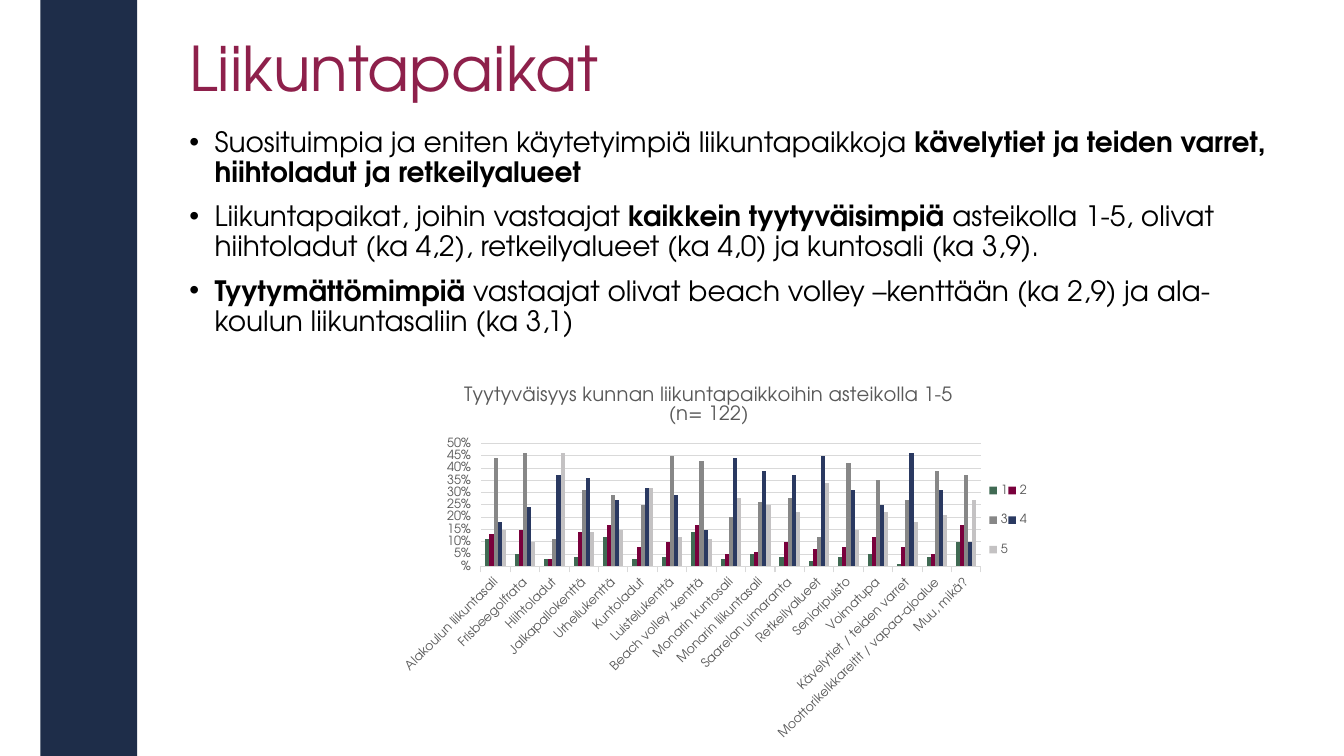
from lxml import etree
from pptx import Presentation
from pptx.chart.data import CategoryChartData
from pptx.dml.color import RGBColor
from pptx.enum.chart import XL_CHART_TYPE as ChartType, XL_LEGEND_POSITION as LegendPosition, XL_TICK_MARK as TickMark
from pptx.enum.shapes import MSO_SHAPE as Shape
from pptx.oxml.ns import qn
from pptx.util import Inches, Pt

FONT = "TeX Gyre Adventor"
GREY, GRID = "595959", "D9D9D9"
CHART_WIDTH, CHART_HEIGHT = 6.34, 3.77


def color(value):
    return RGBColor.from_string(value)


def format_font(font, size, value, bold=False):
    font.name, font.size, font.bold = FONT, Pt(size), bold
    font.color.rgb = color(value)


presentation = Presentation()
presentation.slide_width, presentation.slide_height = Inches(13.33), Inches(7.5)
slide = presentation.slides.add_slide(presentation.slide_layouts[6])

band = slide.shapes.add_shape(Shape.RECTANGLE, Inches(0.4), 0, Inches(0.96), Inches(7.5))
band.shadow.inherit = False
band.fill.solid()
band.fill.fore_color.rgb = color("1E2D49")
band.line.fill.background()

title_frame = slide.shapes.add_textbox(Inches(1.78), Inches(0.33), Inches(10.89), Inches(1.45)).text_frame
title_frame.word_wrap = True
paragraph = title_frame.paragraphs[0]
paragraph.line_spacing = 0.9
run = paragraph.add_run()
run.text = "Liikuntapaikat"
format_font(run.font, 44, "8E204B")

bullets = [
    [("Suosituimpia ja eniten käytetyimpiä liikuntapaikkoja ", False),
     ("kävelytiet ja teiden varret, hiihtoladut ja retkeilyalueet", True)],
    [("Liikuntapaikat, joihin vastaajat ", False),
     ("kaikkein tyytyväisimpiä ", True),
     ("asteikolla 1-5, olivat hiihtoladut (ka 4,2), retkeilyalueet (ka 4,0) ja kuntosali (ka 3,9).", False)],
    [("Tyytymättömimpiä", True),
     (" vastaajat olivat beach volley –kenttään (ka 2,9) ja ala-koulun liikuntasaliin (ka 3,1)", False)],
]
body_frame = slide.shapes.add_textbox(Inches(1.78), Inches(1.22), Inches(10.89), Inches(2.22)).text_frame
body_frame.word_wrap = True
for index, parts in enumerate(bullets):
    paragraph = body_frame.add_paragraph() if index else body_frame.paragraphs[0]
    paragraph.line_spacing = 0.9
    paragraph.space_before = Pt(10)
    for text, bold in parts:
        run = paragraph.add_run()
        run.text = text
        format_font(run.font, 20, "000000", bold)
    properties = paragraph._p.get_or_add_pPr()
    properties.set("marL", str(Inches(0.25)))
    properties.set("indent", str(-Inches(0.25)))
    etree.SubElement(properties, qn("a:buFont"), typeface="Arial")
    etree.SubElement(properties, qn("a:buChar"), char="•")

places = [
    "Alakoulun liikuntasali", "Frisbeegolfrata", "Hiihtoladut", "Jalkapallokenttä", "Urheilukenttä",
    "Kuntoladut", "Luistelukenttä", "Beach volley -kenttä", "Monarin kuntosali", "Monarin liikuntasali",
    "Saarelan uimaranta", "Retkeilyalueet", "Senioripuisto", "Voimatupa", "Kävelytiet / teiden varret",
    "Moottorikelkkareitit / vapaa-ajoalue", "Muu, mikä?",
]
ratings = [
    ("1", "406A53", [11, 5, 3, 4, 12, 3, 4, 14, 3, 5, 4, 2, 4, 5, 1, 4, 10]),
    ("2", "79003C", [13, 15, 3, 14, 17, 8, 10, 17, 5, 6, 10, 7, 8, 12, 8, 5, 17]),
    ("3", "878787", [44, 46, 11, 31, 29, 25, 45, 43, 20, 26, 28, 12, 42, 35, 27, 39, 37]),
    ("4", "2A3961", [18, 24, 37, 36, 27, 32, 29, 15, 44, 39, 37, 45, 31, 25, 46, 31, 10]),
    ("5", "C4C2C3", [15, 10, 46, 14, 15, 32, 12, 11, 28, 25, 22, 34, 15, 22, 18, 21, 27]),
]
chart_data = CategoryChartData(number_format="0%")
chart_data.categories = places
for name, fill, percents in ratings:
    chart_data.add_series(name, [percent / 100 for percent in percents])
chart = slide.shapes.add_chart(ChartType.COLUMN_CLUSTERED, Inches(3.86), Inches(3.65),
                               Inches(CHART_WIDTH), Inches(CHART_HEIGHT), chart_data).chart
format_font(chart.font, 10, "000000")

chart.has_title = True
paragraph = chart.chart_title.text_frame.paragraphs[0]
run = paragraph.add_run()
run.text = "Tyytyväisyys kunnan liikuntapaikkoihin asteikolla 1-5 (n= 122)"
format_font(run.font, 14, GREY)
chart.chart_title.include_in_layout = False

chart.has_legend = True
chart.legend.position = LegendPosition.RIGHT
chart.legend.include_in_layout = False
format_font(chart.legend.font, 9, GREY)

plot = chart.plots[0]
plot.gap_width, plot.overlap = 219, 0
plot.vary_by_categories = False
for series, (name, fill, percents) in zip(plot.series, ratings):
    series.format.fill.solid()
    series.format.fill.fore_color.rgb = color(fill)
    series.invert_if_negative = False

category_axis, value_axis = chart.category_axis, chart.value_axis
for axis in (category_axis, value_axis):
    axis.major_tick_mark = TickMark.OUTSIDE
    format_font(axis.tick_labels.font, 9, GREY)
category_axis._element.find(qn("c:txPr")).find(qn("a:bodyPr")).set("rot", str(-45 * 60000))
value_axis.minimum_scale, value_axis.maximum_scale, value_axis.major_unit = 0, 0.5, 0.05
value_axis.tick_labels.number_format = "#.#%"
value_axis.tick_labels.number_format_is_linked = False
value_axis.format.line.fill.background()
for line in (category_axis.format.line, value_axis.major_gridlines.format.line):
    line.color.rgb = color(GRID)
    line.width = Pt(0.75)

plot_area = chart._chartSpace.chart.plotArea
legend = chart.legend._element
layouts = [
    (plot_area, 0, [("layoutTarget", "inner")], (0.91, 0.75, 4.96, 1.22)),
    (legend, 1, [], (5.95, 0.98, 0.38, 1.06)),
]
for parent, position, settings, (left, top, width, height) in layouts:
    for old_layout in parent.findall(qn("c:layout")):
        parent.remove(old_layout)
    layout = etree.Element(qn("c:layout"))
    parent.insert(position, layout)
    manual = etree.SubElement(layout, qn("c:manualLayout"))
    settings = settings + [("xMode", "edge"), ("yMode", "edge"),
                           ("x", left / CHART_WIDTH), ("y", top / CHART_HEIGHT),
                           ("w", width / CHART_WIDTH), ("h", height / CHART_HEIGHT)]
    for tag, value in settings:
        etree.SubElement(manual, qn("c:" + tag), val=str(value))

presentation.save("out.pptx")
